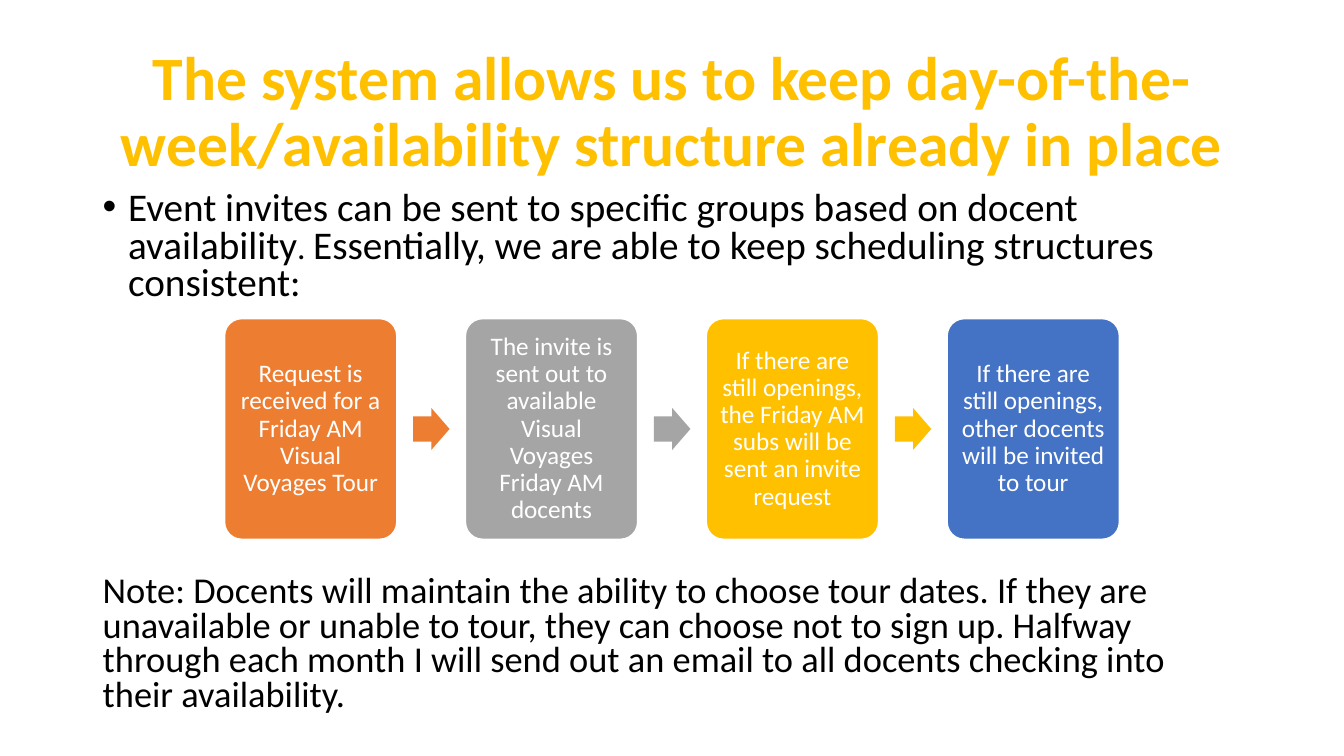
"""Build the slide on docent invites as a title, a bullet, four steps and a note."""
from dataclasses import dataclass

import lxml.etree
import pptx
import pptx.dml.color
import pptx.enum.shapes
import pptx.enum.text
import pptx.oxml.ns
import pptx.util

Cm = pptx.util.Cm
Shape = pptx.enum.shapes.MSO_SHAPE
Align = pptx.enum.text.PP_ALIGN
Anchor = pptx.enum.text.MSO_ANCHOR

COLORS = {
    "orange": "ED7D31",
    "gray": "A5A5A5",
    "gold": "FFC000",
    "blue": "4472C4",
    "white": "FFFFFF",
    "black": "000000",
}
LEFT, WIDTH = 2.34, 29.21
STEP_LEFT, STEP_TOP, STEP_WIDTH, STEP_HEIGHT = 5.66, 8.03, 4.34, 5.56
PITCH = 6.07
ARROW_SHIFT, ARROW_WIDTH, ARROW_HEIGHT = 4.75, 0.92, 1.06


@dataclass
class Step:
    text: str
    color: str


STEPS = [
    Step("Request is received for a Friday AM Visual Voyages Tour", "orange"),
    Step("The invite is sent out to available Visual Voyages Friday AM docents", "gray"),
    Step("If there are still openings, the Friday AM subs will be sent an invite request", "gold"),
    Step("If there are still openings, other docents will be invited to tour", "blue"),
]


def rgb(name: str) -> pptx.dml.color.RGBColor:
    return pptx.dml.color.RGBColor.from_string(COLORS[name])


def write(frame, text: str | list[tuple[str, int]], *, size: int = 28, color: str = "black",
          bold: bool = False, align=Align.LEFT, anchor=Anchor.TOP, space: float = 0.8,
          inset: float | None = None, bullet: bool = False) -> None:
    frame.word_wrap = True
    frame.vertical_anchor = anchor
    if inset is not None:
        frame.margin_left = frame.margin_right = Cm(inset)
        frame.margin_top = frame.margin_bottom = Cm(inset)
    para = frame.paragraphs[0]
    para.alignment = align
    para.line_spacing = space
    for words, points in [(text, size)] if isinstance(text, str) else text:
        run = para.add_run()
        run.text = words
        run.font.name = "Calibri"
        run.font.size = pptx.util.Pt(points)
        run.font.bold = bold
        run.font.color.rgb = rgb(color)
    if bullet:
        props = para._p.get_or_add_pPr()
        props.set("marL", str(Cm(0.64)))
        props.set("indent", str(-Cm(0.64)))
        font = lxml.etree.SubElement(props, pptx.oxml.ns.qn("a:buFont"))
        font.set("typeface", "Arial")
        mark = lxml.etree.SubElement(props, pptx.oxml.ns.qn("a:buChar"))
        mark.set("char", "•")


def add_text(slide, top: float, height: float):
    return slide.shapes.add_textbox(Cm(LEFT), Cm(top), Cm(WIDTH), Cm(height)).text_frame


def add_block(slide, kind, left: float, top: float, width: float, height: float,
              color: str, adjust: list[float]):
    block = slide.shapes.add_shape(kind, Cm(left), Cm(top), Cm(width), Cm(height))
    block.shadow.inherit = False
    block.fill.solid()
    block.fill.fore_color.rgb = rgb(color)
    block.line.fill.background()
    for place, value in enumerate(adjust):
        block.adjustments[place] = value
    return block


def add_step(slide, place: int, step: Step) -> None:
    left = STEP_LEFT + place * PITCH
    card = add_block(slide, Shape.ROUNDED_RECTANGLE, left, STEP_TOP, STEP_WIDTH,
                     STEP_HEIGHT, step.color, [0.1])
    card.line.color.rgb = rgb("white")
    card.line.width = pptx.util.Pt(1)
    write(card.text_frame, step.text, size=18, color="white", align=Align.CENTER,
          anchor=Anchor.MIDDLE, space=0.9, inset=0.18)
    if place < len(STEPS) - 1:
        top = STEP_TOP + (STEP_HEIGHT - ARROW_HEIGHT) / 2
        add_block(slide, Shape.RIGHT_ARROW, left + ARROW_SHIFT, top, ARROW_WIDTH,
                  ARROW_HEIGHT, step.color, [0.6, 0.5])


def main() -> None:
    deck = pptx.Presentation()
    deck.slide_width, deck.slide_height = Cm(33.87), Cm(19.05)
    slide = deck.slides.add_slide(deck.slide_layouts[6])
    write(add_text(slide, 1.02, 3.68),
          "The system allows us to keep day-of-the-week/availability structure already in place",
          size=44, color="gold", bold=True, align=Align.CENTER, anchor=Anchor.MIDDLE, space=0.9)
    write(add_text(slide, 4.7, 3.2), [
        ("Event invites can be sent to specific groups based on docent availability", 28),
        (". ", 24),
        ("Essentially, we are able to keep scheduling structures consistent:", 28),
    ], bullet=True)
    for place, step in enumerate(STEPS):
        add_step(slide, place, step)
    write(add_text(slide, 14.37, 3.97),
          "Note: Docents will maintain the ability to choose tour dates. If they are unavailable "
          "or unable to tour, they can choose not to sign up. Halfway through each month I will "
          "send out an email to all docents checking into their availability.", size=26)
    deck.save("out.pptx")


if __name__ == "__main__":
    main()
